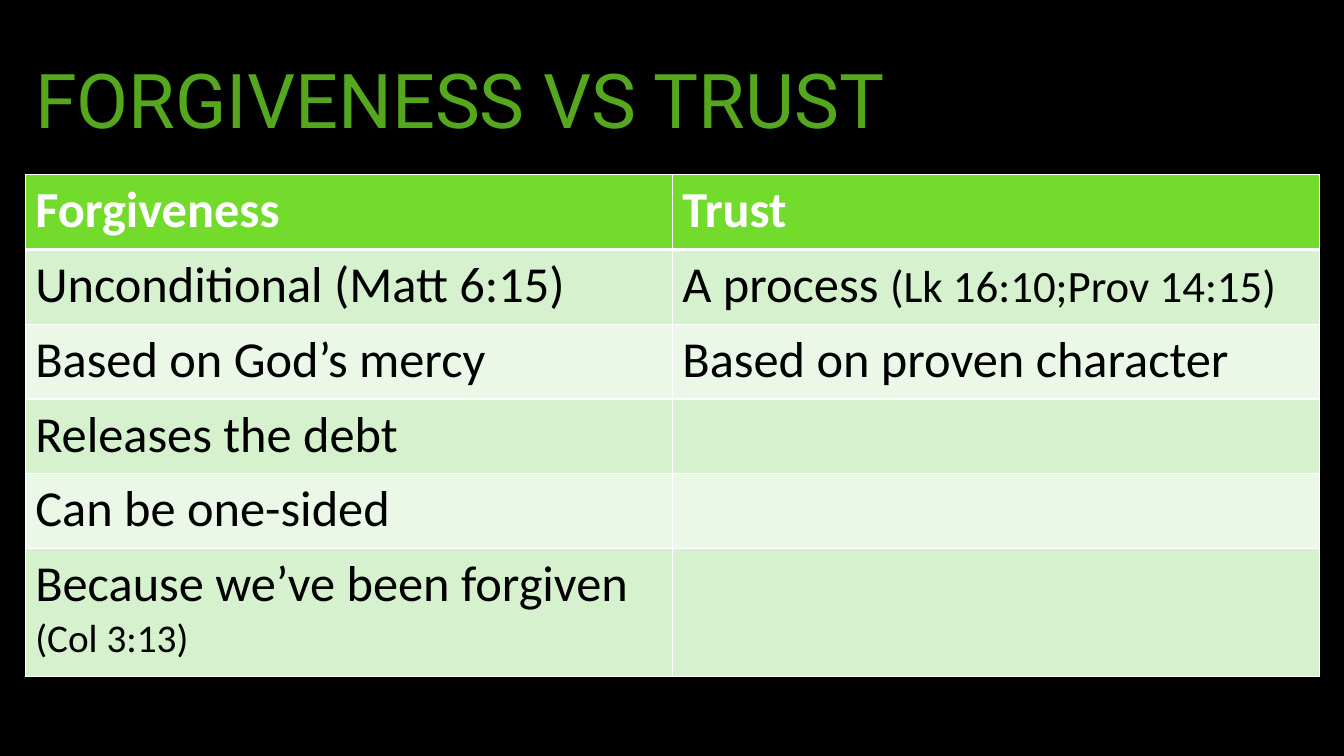
"""Build the slide comparing forgiveness with trust."""
from dataclasses import dataclass

from lxml import etree
from pptx import Presentation
from pptx.dml.color import RGBColor
from pptx.enum import text as t
from pptx.oxml import ns
from pptx.util import Pt

BLACK = RGBColor(0x00, 0x00, 0x00)
WHITE = RGBColor(0xFF, 0xFF, 0xFF)
TITLE_GREEN = RGBColor(0x55, 0xA8, 0x1D)
HEADER_GREEN = RGBColor(0x72, 0xDB, 0x2B)
BAND_COLORS = (RGBColor(0xEB, 0xF8, 0xE8), RGBColor(0xD5, 0xF1, 0xCD))


@dataclass(frozen=True)
class Run:
    text: str
    size: float = 36


@dataclass(frozen=True)
class Row:
    forgiveness: tuple[Run, ...]
    trust: tuple[Run, ...] = ()
    height: float = 53.4


ROWS = (
    Row((Run("Forgiveness"),), (Run("Trust"),)),
    Row((Run("Unconditional (Matt 6:15)"),),
        (Run("A process "), Run("(Lk 16:10;Prov 14:15)", 32))),
    Row((Run("Based on God’s mercy"),), (Run("Based on proven character"),)),
    Row((Run("Releases the debt"),)),
    Row((Run("Can be one-sided"),)),
    Row((Run("Because we’ve been forgiven "), Run("(Col 3:13)", 28)), height=91.4),
)


def add_run(paragraph, run: Run, color: RGBColor, **font_format) -> None:
    text_run = paragraph.add_run()
    text_run.text = run.text
    for name, value in {"size": Pt(run.size), **font_format}.items():
        setattr(text_run.font, name, value)
    text_run.font.color.rgb = color


def set_borders(cell, top: float, bottom: float) -> None:
    properties = cell._tc.get_or_add_tcPr()
    widths = {"lnL": 1, "lnR": 1, "lnT": top, "lnB": bottom}
    for position, (side, width) in enumerate(widths.items()):
        line = etree.Element(ns.qn(f"a:{side}"), w=str(Pt(width)))
        fill = etree.SubElement(line, ns.qn("a:solidFill"))
        etree.SubElement(fill, ns.qn("a:srgbClr"), val=str(WHITE))
        properties.insert(position, line)


def add_title(slide) -> None:
    frame = slide.shapes.add_textbox(Pt(18), Pt(15.8), Pt(928.8), Pt(116.6)).text_frame
    frame.word_wrap = True
    frame.vertical_anchor = t.MSO_ANCHOR.MIDDLE
    paragraph = frame.paragraphs[0]
    paragraph.line_spacing = 0.9
    add_run(paragraph, Run("FORGIVENESS VS TRUST", 54), TITLE_GREEN, name="Roboto")


def add_comparison(slide) -> None:
    height = sum(row.height for row in ROWS)
    table = slide.shapes.add_table(
        len(ROWS), 2, Pt(18), Pt(124.8), Pt(924.6), Pt(height)).table
    for index, row in enumerate(ROWS):
        is_header = index == 0
        table.rows[index].height = Pt(row.height)
        for column, runs in enumerate((row.forgiveness, row.trust)):
            cell = table.cell(index, column)
            cell.fill.solid()
            cell.fill.fore_color.rgb = HEADER_GREEN if is_header else BAND_COLORS[index % 2]
            set_borders(cell, top=3 if index == 1 else 1, bottom=3 if is_header else 1)
            for run in runs:
                add_run(cell.text_frame.paragraphs[0], run,
                        WHITE if is_header else BLACK, name="Calibri", bold=is_header)


def main() -> None:
    presentation = Presentation()
    presentation.slide_width, presentation.slide_height = Pt(960), Pt(540)
    slide = presentation.slides.add_slide(presentation.slide_layouts[6])
    slide.background.fill.solid()
    slide.background.fill.fore_color.rgb = BLACK
    add_title(slide)
    add_comparison(slide)
    presentation.save("out.pptx")


if __name__ == "__main__":
    main()
